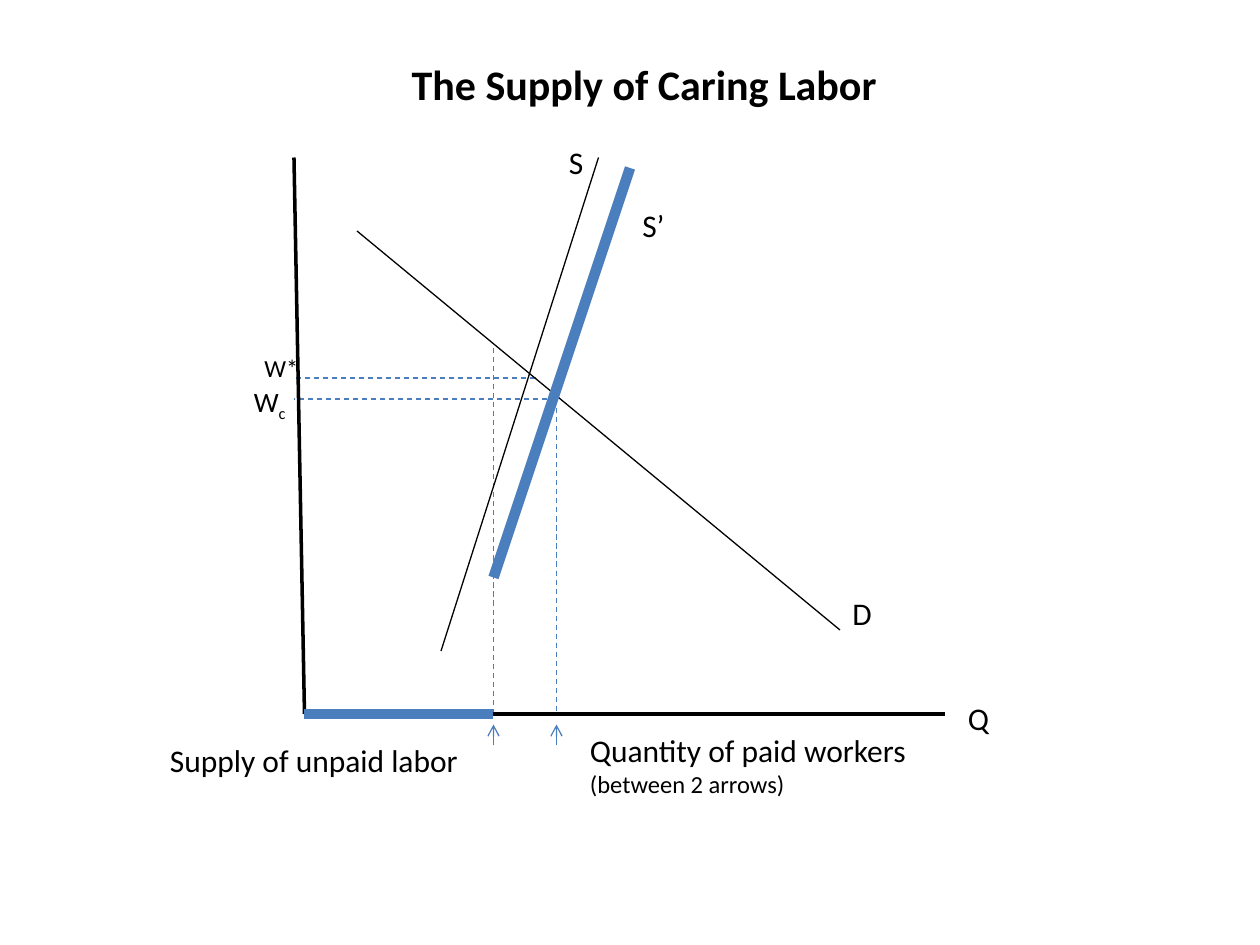
from lxml.etree import SubElement
from pptx import Presentation
from pptx.dml.color import RGBColor
from pptx.enum.dml import MSO_LINE_DASH_STYLE as Dash
from pptx.enum.shapes import MSO_CONNECTOR as Connector
from pptx.enum.text import MSO_ANCHOR as Anchor, MSO_AUTO_SIZE as AutoSize, PP_ALIGN as Align
from pptx.oxml.ns import qn
from pptx.util import Pt

BLACK, BLUE = "000000", "4B7EBC"
ORIGIN_X, BASE_Y = 174, 408
WAGE_X, WAGE_STAR, WAGE_C = 168, 216, 228
UNPAID_X, PAID_X = 282, 318

TITLE = "The Supply of Caring Labor"
CURVES = [
    ((168, 90), (ORIGIN_X, BASE_Y), BLACK, 2),
    ((ORIGIN_X, BASE_Y), (540, BASE_Y), BLACK, 2),
    ((204, 132), (480, 360), BLACK, 0.75),
    ((252, 372), (342, 90), BLACK, 0.75),
    ((360, 96), (UNPAID_X, 330), BLUE, 6),
    ((ORIGIN_X, BASE_Y), (UNPAID_X, BASE_Y), BLUE, 6),
]
GUIDES = [
    ((306, WAGE_STAR), (WAGE_X, WAGE_STAR)),
    ((PAID_X, WAGE_C), (WAGE_X, WAGE_C)),
    ((UNPAID_X, BASE_Y), (UNPAID_X, 198)),
    ((PAID_X, WAGE_C), (PAID_X, BASE_Y)),
]
LABELS = [
    ((144, 198, 34.5, 24.5), False, [("W*", "", 14)]),
    ((318, 78, 29, 29), True, [("S", "", 18)]),
    ((480, 336, 42, 29), True, [("D", "", 18)]),
    ((360, 114, 27.5, 29), True, [("S’", "", 18)]),
    ((138, 216, 36, 26.5), True, [("W", "c", 16)]),
    ((90, 420, 181.5, 29), False, [("Supply of unpaid labor", "", 18)]),
    ((546, 396, 33, 29), True, [("Q", "", 18)]),
    ((330, 414, 197.5, 46), True,
     [("Quantity of paid workers", "", 18), ("(between 2 arrows)", "", 14)]),
]


def color(value):
    return RGBColor.from_string(value)


def style(paragraph, size, bold=False):
    font = paragraph.font
    font.name, font.size, font.bold = "Calibri", Pt(size), bold
    font.color.rgb = color(BLACK)


def place(shape, box):
    shape.left, shape.top, shape.width, shape.height = map(Pt, box)


def draw_line(slide, start, end, hue=BLUE, width=0.75, dashed=False, arrow=False):
    connector = slide.shapes.add_connector(Connector.STRAIGHT, *map(Pt, start + end))
    line = connector.line
    line.color.rgb, line.width = color(hue), Pt(width)
    if dashed:
        line.dash_style = Dash.DASH
    properties = connector._element.spPr
    if arrow:
        SubElement(properties.find(qn("a:ln")), qn("a:tailEnd"), type="arrow")
    SubElement(properties, qn("a:effectLst"))


def add_label(slide, box, wrap, rows):
    frame = slide.shapes.add_textbox(*map(Pt, box)).text_frame
    frame.word_wrap, frame.auto_size = wrap, AutoSize.SHAPE_TO_FIT_TEXT
    for index, (text, subscript, size) in enumerate(rows):
        paragraph = frame.add_paragraph() if index else frame.paragraphs[0]
        style(paragraph, size)
        paragraph.add_run().text = text
        if subscript:
            run = paragraph.add_run()
            run.text = subscript
            run.font._element.set("baseline", "-25000")


def main():
    """Build the caring labor supply and demand slide."""
    deck = Presentation()
    deck.slide_width, deck.slide_height = Pt(720), Pt(540)
    slide = deck.slides.add_slide(deck.slide_layouts[5])

    title = slide.shapes.title
    place(title, (228, 30, 299, 36))
    frame = title.text_frame
    frame.text = TITLE
    frame.word_wrap, frame.auto_size = False, AutoSize.SHAPE_TO_FIT_TEXT
    frame.vertical_anchor = Anchor.TOP
    heading = frame.paragraphs[0]
    heading.alignment = Align.LEFT
    style(heading, 24, bold=True)

    for start, end in GUIDES:
        draw_line(slide, start, end, dashed=True)
    for curve in CURVES:
        draw_line(slide, *curve)
    for x in (PAID_X, UNPAID_X):
        draw_line(slide, (x, 426), (x, 414), arrow=True)
    for label in LABELS:
        add_label(slide, *label)

    deck.save("out.pptx")


if __name__ == "__main__":
    main()
